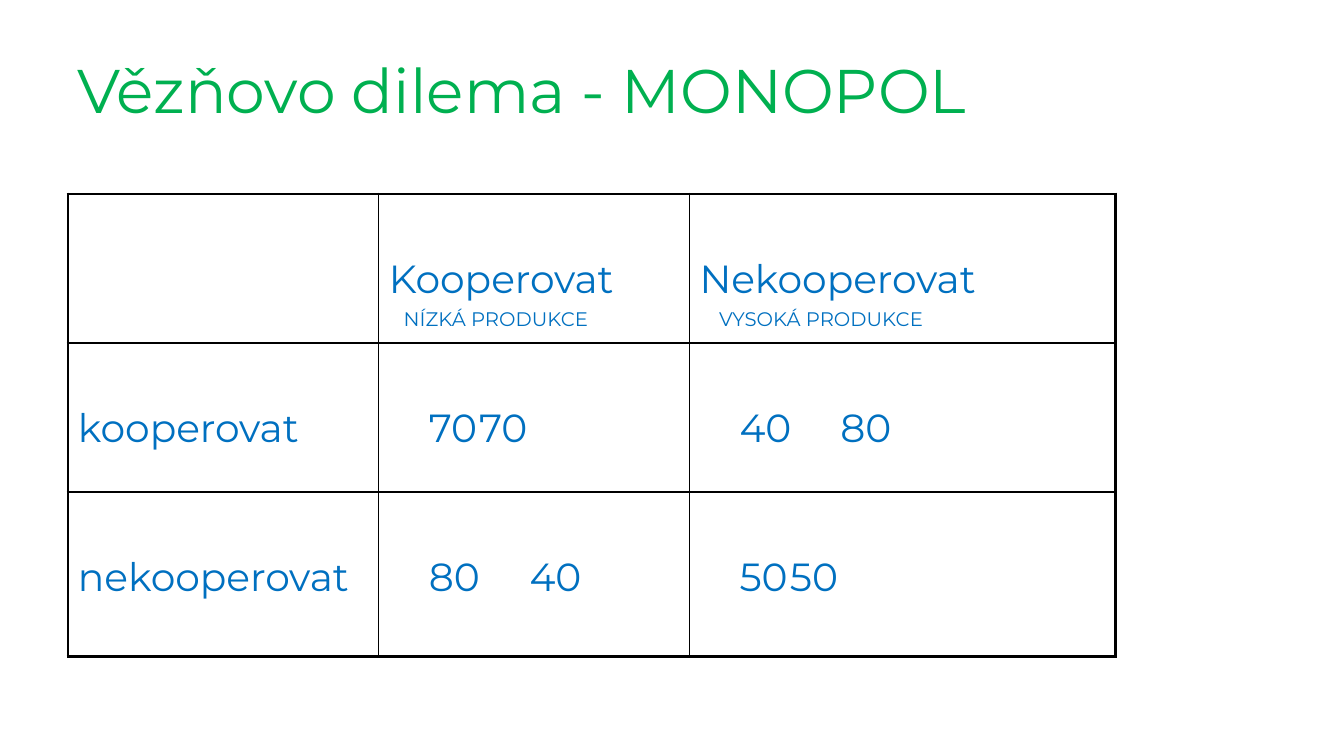
from lxml.etree import SubElement
from pptx import Presentation
from pptx.dml.color import RGBColor
from pptx.enum.text import MSO_ANCHOR as Anchor, MSO_AUTO_SIZE as AutoSize, PP_ALIGN as Align
from pptx.oxml import parse_xml
from pptx.oxml.ns import nsdecls, qn
from pptx.util import Pt

GREEN = RGBColor(0x00, 0xB0, 0x50)
BLUE = RGBColor(0x00, 0x70, 0xC0)
BLACK = RGBColor(0x00, 0x00, 0x00)
FONT = "Montserrat"
COLUMN_WIDTHS = [222, 222, 304.5]
ROW_HEIGHTS = [106.5, 106.5, 117.5]
TEXT_TOP = 44
CELL_MARGIN = 7.2
PAYOFF_INDENT = 28.6

STRATEGIES = [
    ("Kooperovat", "NÍZKÁ PRODUKCE", 10.7),
    ("Nekooperovat", "VYSOKÁ PRODUKCE", 14),
]
PAYOFFS = [
    ("kooperovat", [("70", "70", 100), ("40", "80", 102)]),
    ("nekooperovat", [("80", "40", 109), ("50", "50", 99)]),
]


def format_runs(para, size, color):
    for span in para.runs:
        span.font.name = FONT
        span.font.size = Pt(size)
        span.font.color.rgb = color


def add_title(page, left, top, width, height):
    title = page.shapes.title
    title.left, title.top, title.width, title.height = map(Pt, (left, top, width, height))
    frame = title.text_frame
    frame.text = "Vězňovo dilema - MONOPOL"
    frame.auto_size = AutoSize.NONE
    frame.word_wrap = True
    frame.vertical_anchor = Anchor.MIDDLE
    para = frame.paragraphs[0]
    para.alignment = Align.LEFT
    para.line_spacing = 0.9
    format_runs(para, 44, GREEN)


def set_borders(cell, widths):
    properties = cell._tc.get_or_add_tcPr()
    for index, (side, width) in enumerate(zip("LRTB", widths)):
        border = parse_xml(
            f'<a:ln{side} {nsdecls("a")} w="{Pt(width)}"><a:solidFill>'
            f'<a:srgbClr val="{BLACK}"/></a:solidFill></a:ln{side}>'
        )
        properties.insert(index, border)


def indent(para, left, tab=None):
    properties = para._p.get_or_add_pPr()
    properties.set("marL", str(Pt(left)))
    properties.set("indent", "0")
    if tab:
        stops = SubElement(properties, qn("a:tabLst"))
        SubElement(stops, qn("a:tab"), pos=str(Pt(tab)), algn="l")


def write_cell(cell, text):
    cell.text_frame.text = text
    para = cell.text_frame.paragraphs[0]
    format_runs(para, 28, BLUE)
    return para


def add_payoff_table(page, left, top):
    rows, columns = len(ROW_HEIGHTS), len(COLUMN_WIDTHS)
    frame = page.shapes.add_table(
        rows, columns, Pt(left), Pt(top), Pt(sum(COLUMN_WIDTHS)), Pt(sum(ROW_HEIGHTS))
    )
    table = frame.table
    table.first_row = table.horz_banding = False
    for column, width in zip(table.columns, COLUMN_WIDTHS):
        column.width = Pt(width)
    for row, height in zip(table.rows, ROW_HEIGHTS):
        row.height = Pt(height)
    for r in range(rows):
        for c in range(columns):
            cell = table.cell(r, c)
            cell.margin_left = cell.margin_right = Pt(CELL_MARGIN)
            cell.margin_top = Pt(TEXT_TOP)
            cell.vertical_anchor = Anchor.TOP
            cell.fill.background()
            outer_edges = (c == 0, c == columns - 1, r == 0, r == rows - 1)
            set_borders(cell, [2.25 if outer else 1 for outer in outer_edges])
    for c, (strategy, output, offset) in enumerate(STRATEGIES, 1):
        cell = table.cell(0, c)
        write_cell(cell, strategy)
        para = cell.text_frame.add_paragraph()
        para.text = output
        para.space_before = Pt(2.8)
        indent(para, offset)
        format_runs(para, 14, BLUE)
    for r, (strategy, pairs) in enumerate(PAYOFFS, 1):
        write_cell(table.cell(r, 0), strategy)
        for c, (first, second, tab) in enumerate(pairs, 1):
            para = write_cell(table.cell(r, c), f"{first}\t{second}")
            indent(para, PAYOFF_INDENT, tab)


def main():
    deck = Presentation()
    deck.slide_width, deck.slide_height = Pt(960), Pt(540)
    page = deck.slides.add_slide(deck.slide_layouts[5])
    add_title(page, 48, 21.6, 864, 90)
    add_payoff_table(page, 48.5, 138.5)
    deck.save("out.pptx")


if __name__ == "__main__":
    main()
